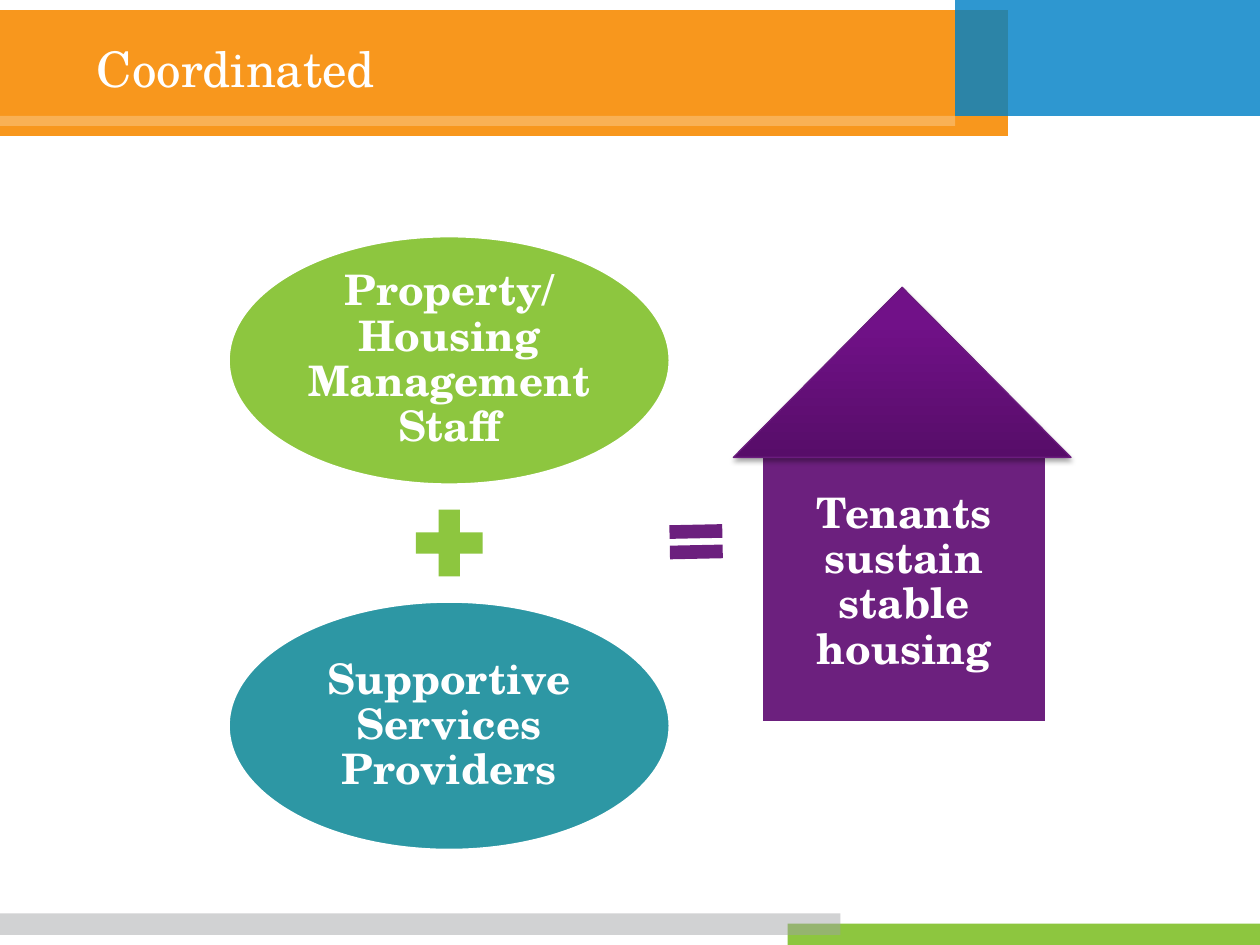
from pptx import Presentation
from pptx import util as u
from pptx.dml.color import RGBColor
from pptx.enum import shapes, text
from pptx.oxml import parse_xml
from pptx.oxml.ns import nsdecls, qn
from lxml import etree

M = shapes.MSO_SHAPE
THEME = dict(font="TeX Gyre Schola", title=28, label=24,
             white="FFFFFF", orange="F8971D", blue="0081C6", green="8DC63F",
             gray="9FA1A4", teal="2D97A4", purple="6C207E", roof_line="6B1D7E")
ROOF_STOPS = [(0, "570D69"), (80, "711188"), (100, "730F8B")]

# Content: left, top, width, height, colour, opacity %
BANDS = [
    (0, 0.08, 8, 1, "orange", 100),
    (7.58, 0, 2.42, 0.92, "blue", 82),
    (6.25, 7.33, 3.75, 0.17, "green", 100),
    (0, 7.25, 6.67, 0.17, "gray", 48),
    (0, 0.92, 7.58, 0.08, "white", 25),
]
TITLE = "Coordinated"
PARTNERS = [("Property/ Housing Management Staff", "green"),
            ("Supportive Services Providers", "teal")]
OUTCOME = "Tenants sustain stable housing"

# Partner column: ovals stacked with the plus centred in the gap
COL_X, COL_Y, OVAL_W, OVAL_H, STEP, PLUS = 1.81, 1.87, 3.51, 1.98, 2.9, 0.72


def rgb(name):
    return RGBColor.from_string(THEME[name])


def add_shape(s, kind, box, color, opacity=100, line=None, width=2):
    sp = s.shapes.add_shape(kind, *map(u.Inches, box))
    sp.shadow.inherit = False
    sp.fill.solid()
    sp.fill.fore_color.rgb = rgb(color)
    if opacity < 100:
        clr = sp.fill._xPr.find(qn("a:solidFill"))[0]
        etree.SubElement(clr, qn("a:alpha"), val=str(opacity * 1000))
    if line:
        sp.line.color.rgb = rgb(line)
        sp.line.width = u.Pt(width)
    else:
        sp.line.fill.background()
    return sp


def set_text(sp, words, size, align, bold=False, inset=None, spacing=None):
    tf = sp.text_frame
    frame = dict(word_wrap=True, vertical_anchor=text.MSO_ANCHOR.MIDDLE)
    if inset is not None:
        for side in ("left", "right", "top", "bottom"):
            frame["margin_" + side] = u.Inches(inset)
    p = tf.paragraphs[0]
    r = p.add_run()
    r.text = words
    formats = [(tf, frame),
               (p, dict(alignment=align, line_spacing=spacing)),
               (r.font, dict(name=THEME["font"], size=u.Pt(THEME[size]), bold=bold))]
    for target, values in formats:
        for key, value in values.items():
            setattr(target, key, value)
    r.font.color.rgb = rgb("white")


def add_label(sp, words):
    set_text(sp, words, "label", text.PP_ALIGN.CENTER, True, 0.03, 0.9)


def add_roof(s, box):
    sp = add_shape(s, M.ISOSCELES_TRIANGLE, box, "purple", line="roof_line", width=0.75)
    stops = "".join(f'<a:gs pos="{pos * 1000}"><a:srgbClr val="{c}"/></a:gs>'
                    for pos, c in ROOF_STOPS)
    grad = parse_xml(f'<a:gradFill {nsdecls("a")} rotWithShape="1"><a:gsLst>{stops}</a:gsLst>'
                     '<a:lin ang="16200000" scaled="0"/></a:gradFill>')
    spPr = sp.fill._xPr
    spPr.replace(spPr.find(qn("a:solidFill")), grad)
    shadow = parse_xml(f'<a:outerShdw {nsdecls("a")} blurRad="{u.Pt(3.1)}" dist="{u.Pt(1.8)}" '
                       'dir="5400000" rotWithShape="0"><a:srgbClr val="000000">'
                       '<a:alpha val="35000"/></a:srgbClr></a:outerShdw>')
    spPr.find(qn("a:effectLst")).append(shadow)


def main():
    prs = Presentation()
    prs.slide_width, prs.slide_height = u.Inches(10), u.Inches(7.5)
    s = prs.slides.add_slide(prs.slide_layouts[6])

    # Header and footer bands
    for *box, color, opacity in BANDS:
        add_shape(s, M.RECTANGLE, box, color, opacity)

    # Title
    title = s.shapes.add_textbox(*map(u.Inches, (0.67, 0.25, 6.58, 0.58)))
    set_text(title, TITLE, "title", text.PP_ALIGN.LEFT)

    # Partners joined by a plus
    for i, (words, color) in enumerate(PARTNERS):
        box = (COL_X, COL_Y + i * STEP, OVAL_W, OVAL_H)
        add_label(add_shape(s, M.OVAL, box, color, line="white"), words)
    plus_box = (COL_X + (OVAL_W - PLUS) / 2,
                COL_Y + (STEP + OVAL_H - PLUS) / 2, PLUS, PLUS)
    add_shape(s, M.MATH_PLUS, plus_box, "green")

    # Equals sign, then the house: walls and roof
    equals = add_shape(s, M.MATH_EQUAL, (5.24, 4.07, 0.57, 0.46), "purple")
    equals.rotation = 358.8
    walls = add_shape(s, M.FLOWCHART_PROCESS, (6.04, 3.51, 2.27, 2.23), "purple", line="white")
    add_label(walls, OUTCOME)
    add_roof(s, (5.82, 2.28, 2.68, 1.35))

    prs.save("out.pptx")


if __name__ == "__main__":
    main()
